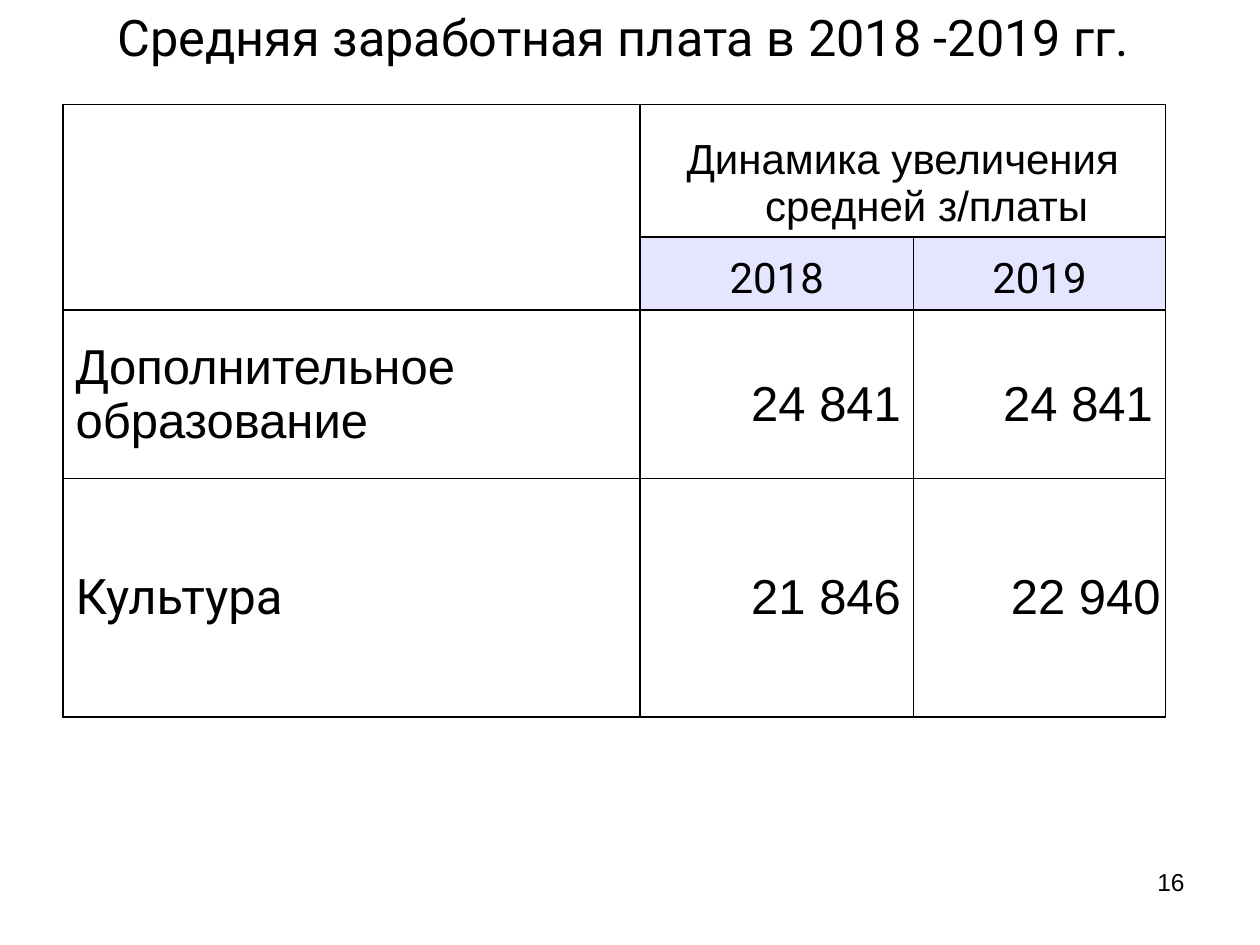
from lxml.etree import SubElement
from pptx import Presentation
from pptx.dml.color import RGBColor
from pptx.enum.text import MSO_ANCHOR as ANCHOR, MSO_AUTO_SIZE as AUTO, PP_ALIGN as ALIGN
from pptx.oxml.ns import qn
from pptx.util import Inches, Pt


def rgb(value):
    return RGBColor.from_string(value)


class SlideBuilder:
    INK, PAPER, YEAR_FILL = "000000", "FFFFFF", "E5E5FF"
    HANGING = 0.38

    def __init__(self, slide):
        self.s = slide

    def set_text(self, tf, text, size, font, align):
        tf.word_wrap = True
        p = tf.paragraphs[0]
        p.text = text
        p.alignment = align
        p.font.size, p.font.name, p.font.bold = Pt(size), font, False
        p.font.color.rgb = rgb(self.INK)
        return p

    def title(self, text, left, top, width, height):
        sp = self.s.shapes.title
        sp.left, sp.top, sp.width, sp.height = map(Inches, (left, top, width, height))
        tf = sp.text_frame
        tf.auto_size, tf.vertical_anchor = AUTO.NONE, ANCHOR.MIDDLE
        self.set_text(tf, text, 28.8, "Roboto", ALIGN.CENTER)

    def text(self, text, left, top, width, height, size, align):
        sp = self.s.shapes.add_textbox(*map(Inches, (left, top, width, height)))
        self.set_text(sp.text_frame, text, size, "Arial", align)

    def table(self, left, top, widths, heights):
        """Add an empty plain table with a thin grid."""
        box = map(Inches, (left, top, sum(widths), sum(heights)))
        table = self.s.shapes.add_table(len(heights), len(widths), *box).table
        table.first_row = table.horz_banding = False
        for column, width in zip(table.columns, widths):
            column.width = Inches(width)
        for row, height in zip(table.rows, heights):
            row.height = Inches(height)
        for cell in table.iter_cells():
            self.borders(cell)
            self.fill(cell, self.PAPER)
        return table

    def borders(self, cell):
        props = cell._tc.get_or_add_tcPr()
        for side in ("lnL", "lnR", "lnT", "lnB"):
            line = SubElement(props, qn(f"a:{side}"), w=str(Pt(1)))
            solid = SubElement(line, qn("a:solidFill"))
            SubElement(solid, qn("a:srgbClr"), val=self.INK)

    def fill(self, cell, color):
        cell.fill.solid()
        cell.fill.fore_color.rgb = rgb(color)

    def cell(self, cell, text, size, font, align, anchor=ANCHOR.MIDDLE):
        cell.vertical_anchor = anchor
        return self.set_text(cell.text_frame, text, size, font, align)

    def hang(self, p):
        props = p._p.get_or_add_pPr()
        props.set("marL", str(Inches(self.HANGING)))
        props.set("indent", str(-Inches(self.HANGING)))


def main():
    prs = Presentation()
    prs.slide_width, prs.slide_height = Inches(10), Inches(7.5)
    b = SlideBuilder(prs.slides.add_slide(prs.slide_layouts[5]))
    b.title("Средняя заработная плата в 2018 -2019 гг. ", 0, 0, 10, 0.58)

    table = b.table(0.5, 0.83, (4.58, 2.17, 2), (1.05, 0.58, 1.34, 1.89))
    table.cell(0, 0).merge(table.cell(1, 0))
    table.cell(0, 1).merge(table.cell(0, 2))

    heading = b.cell(table.cell(0, 1), "Динамика увеличения средней з/платы",
                     24, "Arial", ALIGN.CENTER, ANCHOR.BOTTOM)
    b.hang(heading)
    for col, year in enumerate(("2018", "2019"), 1):
        year_cell = table.cell(1, col)
        b.fill(year_cell, b.YEAR_FILL)
        b.cell(year_cell, year, 24, "Roboto", ALIGN.CENTER, ANCHOR.BOTTOM)

    salaries = (
        ("Дополнительное образование", "Arial", ("24 841", "24 841")),
        ("Культура", "Roboto", ("21 846", "22 940")),
    )
    for row, (sector, font, values) in enumerate(salaries, 2):
        b.cell(table.cell(row, 0), sector, 28, font, ALIGN.LEFT)
        for col, value in enumerate(values, 1):
            b.cell(table.cell(row, col), value, 28, "Arial", ALIGN.RIGHT)
    for col in (1, 2):
        education = table.cell(2, col)
        education.vertical_anchor = ANCHOR.TOP
        education.margin_top = Inches(0.53)
    table.cell(3, 2).margin_right = Inches(0.04)

    b.text("16", 7.17, 6.83, 2.33, 0.52, 14, ALIGN.RIGHT)
    prs.save("out.pptx")


if __name__ == "__main__":
    main()
